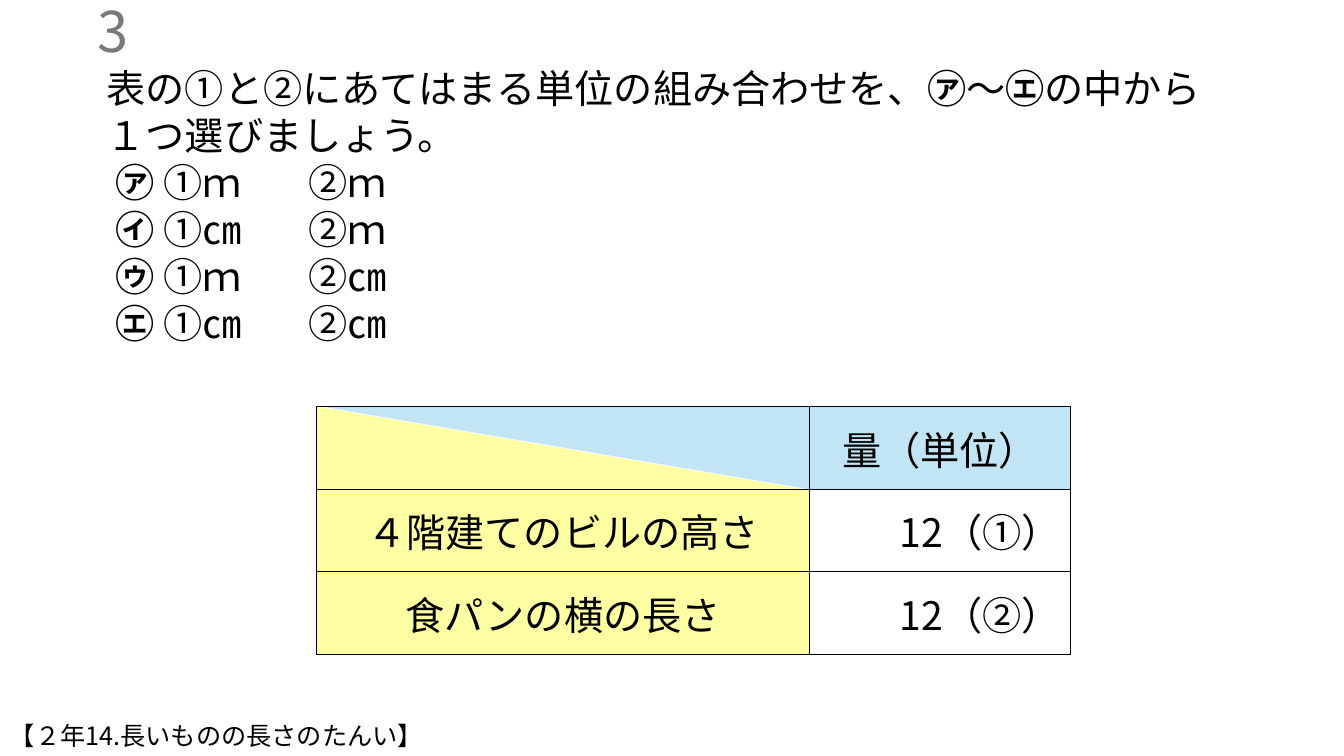
import pptx
import pptx.util
import pptx.dml.color
import pptx.enum.shapes
import pptx.enum.text
import pptx.oxml
import pptx.oxml.ns
from pptx.util import Cm, Pt

FONT = "Noto Sans CJK JP"
COLOURS = {"ink": "000000", "number": "797979", "blue": "C1E5F5", "yellow": "FFFFA3"}
ALIGN = pptx.enum.text.PP_ALIGN
ANCHOR = pptx.enum.text.MSO_ANCHOR
NAMESPACE = pptx.oxml.ns.nsdecls("a")


def colour(name):
    """Return the named colour."""
    return pptx.dml.color.RGBColor.from_string(COLOURS[name])


def format_span(span, size, ink="ink", bold=False):
    """Set font, size, colour and weight of a run."""
    span.font.size = Pt(size)
    span.font.bold = bold
    span.font.color.rgb = colour(ink)
    span.font.name = FONT
    span.font._element.get_or_add_latin().addnext(
        pptx.oxml.parse_xml(f'<a:ea {NAMESPACE} typeface="{FONT}"/>'))


def add_text_box(page, left, top, width, height, anchor=ANCHOR.TOP):
    """Add a wrapping text box and return its text frame."""
    frame = page.shapes.add_textbox(left, top, width, height).text_frame
    frame.word_wrap = True
    frame.vertical_anchor = anchor
    return frame


def add_label(page, left, top, width, height, text, size, ink="ink", align=ALIGN.LEFT):
    """Add a one-line label centred vertically in its box."""
    frame = add_text_box(page, left, top, width, height, ANCHOR.MIDDLE)
    para = frame.paragraphs[0]
    para.text = text
    para.alignment = align
    format_span(para.runs[0], size, ink)


def add_question(page, left, top, width, height):
    """Write the question and its four choices."""
    frame = add_text_box(page, left, top, width, height)
    lines = [["表の①と②にあてはまる単位の組み合わせを、", "㋐", "～", "㋓", "の中から１つ選びましょう。"]]
    choices = [("㋐", "ｍ", "ｍ"), ("㋑", "㎝", "ｍ"), ("㋒", "ｍ", "㎝"), ("㋓", "㎝", "㎝")]
    lines += [[f" {mark} ", f"①{first}\t②{second}"] for mark, first, second in choices]
    for index, pieces in enumerate(lines):
        para = frame.paragraphs[0] if index == 0 else frame.add_paragraph()
        para.line_spacing = Pt(33.6)
        if index:
            para._p.get_or_add_pPr().append(pptx.oxml.parse_xml(
                f'<a:tabLst {NAMESPACE}><a:tab pos="{Cm(5.08)}" algn="l"/></a:tabLst>'))
        for piece in pieces:
            span = para.add_run()
            span.text = piece
            format_span(span, 28, bold=piece.strip() in "㋐㋑㋒㋓")


def add_corner(page, left, top, width, height):
    """Split the corner cell into a blue and a yellow triangle."""
    corner = page.shapes.add_group_shape()
    for fill, shift, turn in (("blue", Cm(0.15), 180), ("yellow", 0, 0)):
        triangle = corner.shapes.add_shape(
            pptx.enum.shapes.MSO_SHAPE.RIGHT_TRIANGLE, left + shift, top, width - Cm(0.15), height)
        triangle.rotation = turn
        triangle.shadow.inherit = False
        triangle.fill.solid()
        triangle.fill.fore_color.rgb = colour(fill)
        triangle.line.fill.background()


def add_borders(cell):
    """Draw a thin black line on all four sides of a cell."""
    properties = cell._tc.get_or_add_tcPr()
    for index, side in enumerate(("lnL", "lnR", "lnT", "lnB")):
        properties.insert(index, pptx.oxml.parse_xml(
            f'<a:{side} {NAMESPACE} w="{Pt(1)}"><a:solidFill>'
            f'<a:srgbClr val="{COLOURS["ink"]}"/></a:solidFill></a:{side}>'))


def add_quantities(page, left, top, width, height):
    """Build the table of quantities over its two-coloured corner."""
    rows = [
        [("", None, ALIGN.CENTER), ("量（単位）", "blue", ALIGN.CENTER)],
        [("４階建てのビルの高さ", "yellow", ALIGN.CENTER), ("12（①）", None, ALIGN.RIGHT)],
        [("食パンの横の長さ", "yellow", ALIGN.CENTER), ("12（②）", None, ALIGN.RIGHT)],
    ]
    name_width = Cm(12.42)
    add_corner(page, left, top, name_width, height // len(rows))
    table = page.shapes.add_table(len(rows), 2, left, top, width, height).table
    table.first_row = table.horz_banding = False
    table.columns[0].width = name_width
    table.columns[1].width = width - name_width
    for row_index, row in enumerate(rows):
        for column_index, (text, fill, align) in enumerate(row):
            cell = table.cell(row_index, column_index)
            cell.vertical_anchor = ANCHOR.MIDDLE
            if fill:
                cell.fill.solid()
                cell.fill.fore_color.rgb = colour(fill)
            else:
                cell.fill.background()
            add_borders(cell)
            para = cell.text_frame.paragraphs[0]
            para.text = text
            para.alignment = align
            for span in para.runs:
                format_span(span, 28)


def main():
    """Build and save the slide."""
    deck = pptx.Presentation()
    deck.slide_width, deck.slide_height = Cm(33.87), Cm(19.05)
    page = deck.slides.add_slide(deck.slide_layouts[6])
    add_quantities(page, Cm(7.98), Cm(10.25), Cm(19), Cm(6.24))
    add_question(page, Cm(2.44), Cm(1.5), Cm(28.4), Cm(7.44))
    add_label(page, Cm(0), Cm(0.25), Cm(3.48), Cm(1.02), "3", 40, "number", ALIGN.RIGHT)
    add_label(page, Cm(0), Cm(18.03), Cm(19.02), Cm(1.02), "【２年14.長いものの長さのたんい】", 18)
    deck.save("out.pptx")


if __name__ == "__main__":
    main()
